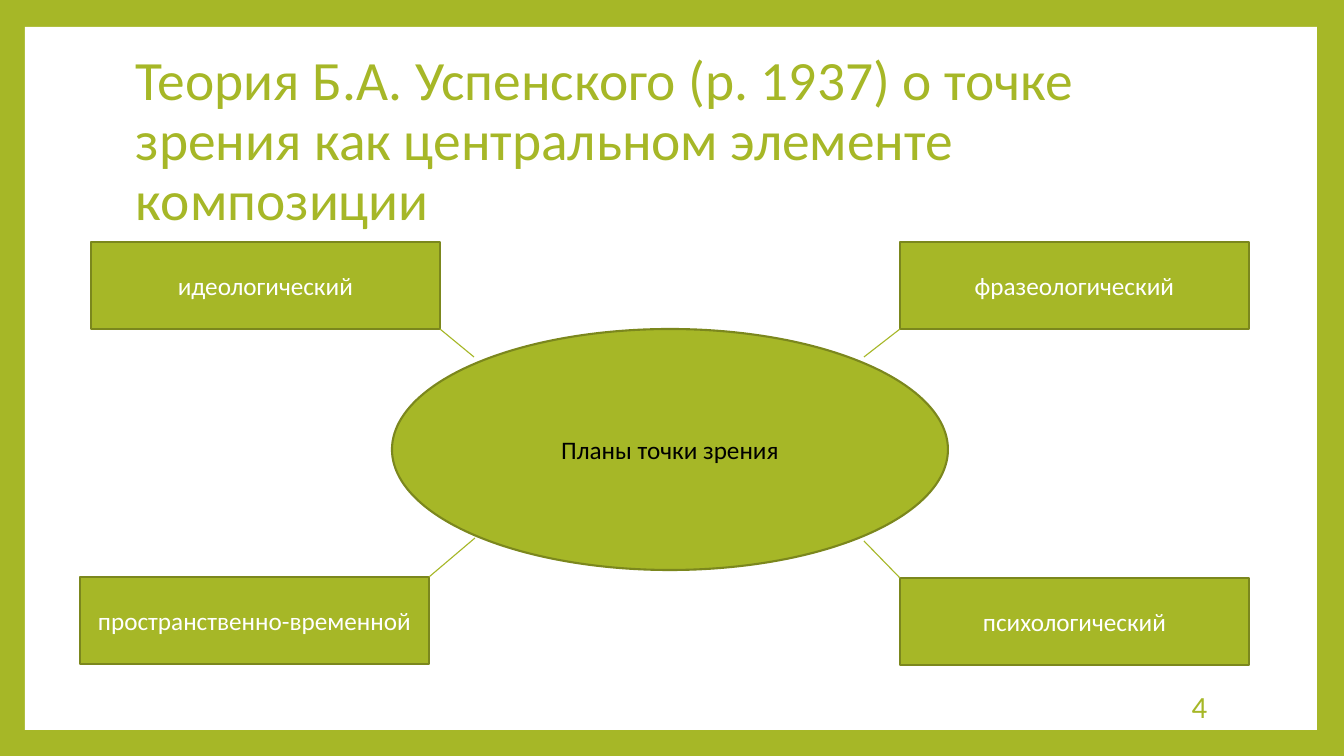
from pptx import Presentation
from pptx.dml.color import RGBColor
from pptx.enum.shapes import MSO_CONNECTOR, MSO_SHAPE
from pptx.enum.text import MSO_ANCHOR, PP_ALIGN
from pptx.oxml.ns import qn
from pptx.util import Pt
from lxml import etree

RECTANGLE, OVAL = MSO_SHAPE.RECTANGLE, MSO_SHAPE.OVAL
STRAIGHT = MSO_CONNECTOR.STRAIGHT
LEFT, CENTER, RIGHT = PP_ALIGN.LEFT, PP_ALIGN.CENTER, PP_ALIGN.RIGHT
MIDDLE = MSO_ANCHOR.MIDDLE

# Content, lengths in px
SLIDE_SIZE = (1344, 756)
PANEL = (25, 27, 1292, 703)
TITLE = ("Теория Б.А. Успенского (р. 1937) о точке зрения как центральном элементе композиции",
         (126, 68, 1089, 149))
CENTRE = ("Планы точки зрения", (392, 329, 556, 241))
PAGE_NUMBER = ("4", (1028, 686, 189, 40))
PLAN_SIZE = (349, 87)
# text, left and top of the box, end of its line at the ellipse
PLANS = [
    ("идеологический", (91, 242), (474, 357)),
    ("фразеологический", (900, 242), (864, 357)),
    ("психологический", (900, 578), (864, 541)),
    ("пространственно-временной", (80, 577), (475, 538)),
]

THEME = {
    "font": "Calibri",
    "green": RGBColor.from_string("A6B727"),
    "outline": RGBColor.from_string("7B871D"),
    "white": RGBColor.from_string("FFFFFF"),
    "black": RGBColor.from_string("000000"),
    "title_size": Pt(39.6),
    "label_size": Pt(18),
    "number_size": Pt(22),
    "outline_width": Pt(1.5),
    "link_width": Pt(0.79),
}
EMU_PER_PX = 914400 / 100.8


def emu(lengths):
    return [round(length * EMU_PER_PX) for length in lengths]


def write(box, text, size, color, align, spacing=None):
    frame = box.text_frame
    frame.word_wrap = True
    frame.vertical_anchor = MIDDLE
    para = frame.paragraphs[0]
    para.alignment = align
    para.line_spacing = spacing
    span = para.add_run()
    span.text = text
    span.font.color.rgb = THEME[color]
    for name, value in {"name": THEME["font"], "size": THEME[size]}.items():
        setattr(span.font, name, value)


def add_text(page, content, *style):
    text, place = content
    write(page.shapes.add_textbox(*emu(place)), text, *style)


def add_block(page, kind, place, fill, outlined=True):
    box = page.shapes.add_shape(kind, *emu(place))
    box.shadow.inherit = False
    box.fill.solid()
    box.fill.fore_color.rgb = THEME[fill]
    if outlined:
        box.line.color.rgb = THEME["outline"]
        box.line.width = THEME["outline_width"]
    else:
        box.line.fill.background()
    return box


def add_link(page, start, end):
    link = page.shapes.add_connector(STRAIGHT, *emu(start + end))
    link.line.color.rgb = THEME["green"]
    link.line.width = THEME["link_width"]
    etree.SubElement(link._element.spPr, qn("a:effectLst"))


def main():
    deck = Presentation()
    deck.slide_width, deck.slide_height = emu(SLIDE_SIZE)
    page = deck.slides.add_slide(deck.slide_layouts[6])

    # Green frame around a white panel
    page.background.fill.solid()
    page.background.fill.fore_color.rgb = THEME["green"]
    add_block(page, RECTANGLE, PANEL, "white", outlined=False)

    # Title
    add_text(page, TITLE, "title_size", "green", LEFT, 0.9)

    # Central ellipse
    text, place = CENTRE
    write(add_block(page, OVAL, place, "green"), text, "label_size", "black", CENTER)

    # Plans, each linked from the corner that faces the ellipse
    width, height = PLAN_SIZE
    for text, (left, top), link_end in PLANS:
        box = add_block(page, RECTANGLE, (left, top, width, height), "green")
        write(box, text, "label_size", "white", CENTER)
        corner = (left + width if left < link_end[0] else left,
                  top + height if top < link_end[1] else top)
        add_link(page, corner, link_end)

    # Page number
    add_text(page, PAGE_NUMBER, "number_size", "green", RIGHT)

    deck.save("out.pptx")


if __name__ == "__main__":
    main()
